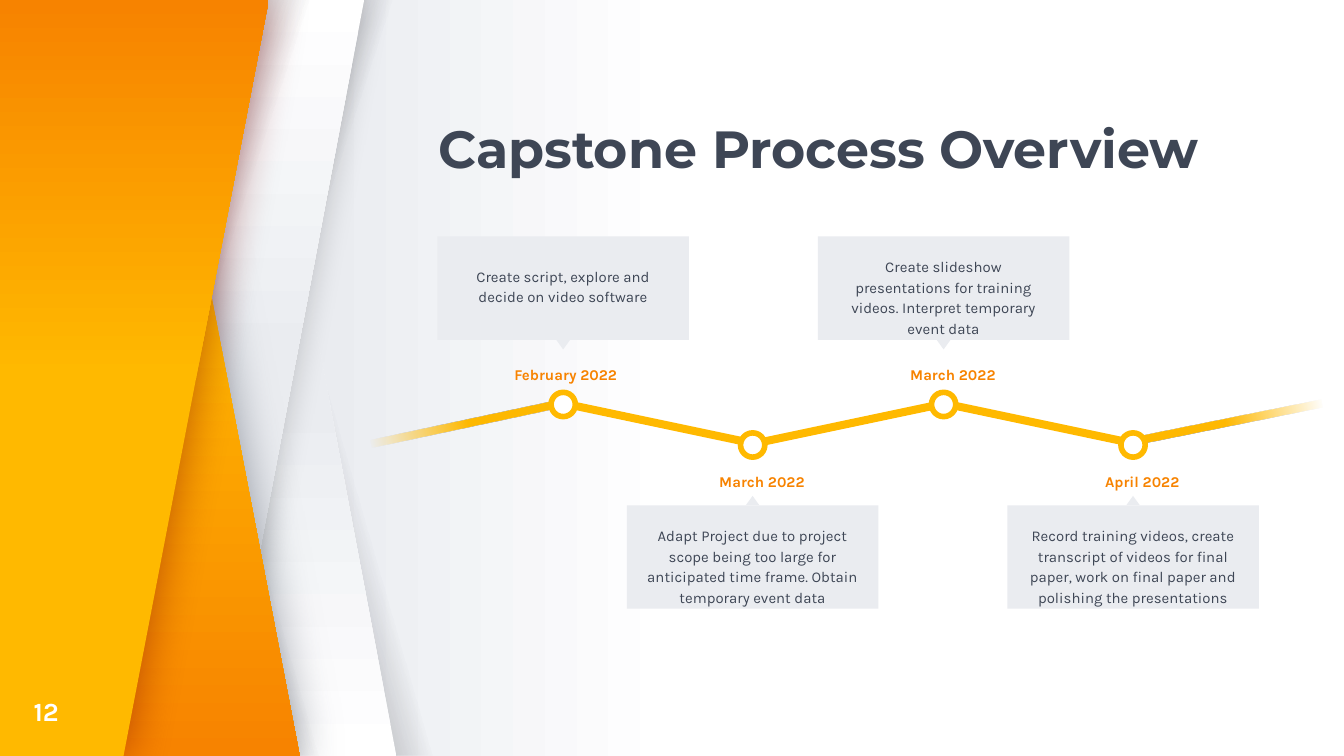
from lxml.etree import SubElement
from pptx import Presentation
from pptx.dml.color import RGBColor
from pptx.enum.shapes import MSO_SHAPE
from pptx.enum.text import MSO_ANCHOR, MSO_AUTO_SIZE, PP_ALIGN
from pptx.oxml.ns import qn
from pptx.util import Pt

COLORS = {
    "white": "FFFFFF", "mist": "EAECF0", "slate": "3E4655", "ink": "27252C",
    "yellow": "FFB900", "orange": "F78300", "black": "000000", "maroon": "7E0808",
}
WIDTH, HEIGHT = 720, 405

BACKGROUND = [(0, "white"), (50, "white"), (76, "mist"), (100, "mist")]
SHADE = [(0, "slate"), (13, "slate"), (55, "ink", 0), (100, "ink", 0)]
PALE = [(0, "white"), (47, "mist"), (100, "mist")]
BACK_ORANGE = [(0, "yellow"), (37, "yellow"), (100, "orange")]
FRONT_ORANGE = [(0, "yellow"), (50, "yellow"), (100, "orange")]
FADE = [(0, "yellow", 0), (50, "yellow"), (100, "yellow")]

BANDS = [
    {"left": 77, "flip": True, "slant": 0.753, "stops": SHADE, "angle": 196},
    {"left": 46.8, "flip": True, "slant": 0.463, "stops": PALE, "angle": 270},
    {"left": 46.8, "slant": 0.753, "stops": SHADE, "angle": 18},
    {"left": 29.5, "slant": 0.463, "stops": PALE, "angle": 90, "shadow": ("black", 20, 16.9)},
    {"left": 15.8, "flip": True, "slant": 0.753, "stops": SHADE, "angle": 196},
    {"points": [(0, 0), (0, HEIGHT), (160.6, HEIGHT), (82.8, 0)],
     "stops": BACK_ORANGE, "angle": 90, "shadow": ("slate", 50, 24.8)},
    {"left": 2.2, "slant": 0.753, "stops": SHADE, "angle": 18},
    {"points": [(0, HEIGHT), (0, 0), (144, 0), (66.2, HEIGHT)],
     "stops": FRONT_ORANGE, "angle": 270, "shadow": ("maroon", 50, 24.8)},
]
SEGMENTS = [
    (198, 348.1, True), (298.8, 11.9, False), (402.5, 348.1, False),
    (502.6, 11.9, False), (602.6, 168.9, True),
]
MILESTONES = [
    {"date": "February 2022", "text": "Create script, explore and decide on video software",
     "center": 301.7, "date_shift": 1.4, "text_shift": 5},
    {"date": "March 2022", "text": "Adapt Project due to project scope being too large for "
     "anticipated time frame. Obtain temporary event data", "center": 403.2},
    {"date": "March 2022", "text": "Create slideshow presentations for training videos. "
     "Interpret temporary event data", "center": 505.5},
    {"date": "April 2022", "text": "Record training videos, create transcript of videos for final "
     "paper, work on final paper and polishing the presentations", "center": 607},
]
UPPER = {"card": 126.7, "pointer": 182.2, "date": 187.2, "node": 216.7, "turn": 180}
LOWER = {"card": 270.7, "pointer": 265.7, "date": 244.8, "node": 238.4, "turn": 0}
CARD_WIDTH, CARD_HEIGHT = 134.8, 55.4


def rgb(name):
    """Return the named colour."""
    return RGBColor.from_string(COLORS[name])


def add_color(parent, name, alpha=100):
    """Add a colour element with its opacity in percent."""
    color = SubElement(parent, qn("a:srgbClr"), val=COLORS[name])
    if alpha < 100:
        SubElement(color, qn("a:alpha"), val=str(alpha * 1000))


def set_gradient(fill, properties, stops, angle):
    """Fill with a linear gradient of any number of stops."""
    fill.gradient()
    gradient = properties.find(qn("a:gradFill"))
    for child in list(gradient):
        gradient.remove(child)
    gradient.set("rotWithShape", "1")
    stop_list = SubElement(gradient, qn("a:gsLst"))
    for position, *color in stops:
        add_color(SubElement(stop_list, qn("a:gs"), pos=str(position * 1000)), *color)
    SubElement(gradient, qn("a:lin"), ang=str(angle * 60000), scaled="0")


def finish(shape, color=None, stops=None, angle=0, shadow=None):
    """Give a shape its fill and shadow, without an outline."""
    shape.shadow.inherit = False
    shape.line.fill.background()
    properties = shape._element.spPr
    if stops:
        set_gradient(shape.fill, properties, stops, angle)
    else:
        shape.fill.solid()
        shape.fill.fore_color.rgb = rgb(color)
    if shadow:
        name, alpha, blur = shadow
        outer = SubElement(properties.find(qn("a:effectLst")), qn("a:outerShdw"),
                           blurRad=str(Pt(blur)), dist="0", dir="0", algn="bl", rotWithShape="0")
        add_color(outer, name, alpha)
    return shape


def add_preset(slide, kind, left, top, width, height, adjustment=None, rotation=0, **style):
    """Add a preset shape placed in points."""
    shape = slide.shapes.add_shape(kind, Pt(left), Pt(top), Pt(width), Pt(height))
    if adjustment is not None:
        shape.adjustments[0] = adjustment
    shape.rotation = rotation
    return finish(shape, **style)


def write(shape, text, size, color, bold=False, font="Karla", inset=0,
          anchor=MSO_ANCHOR.TOP, **paragraph_format):
    """Write one formatted paragraph into a shape."""
    frame = shape.text_frame
    frame_format = {"word_wrap": True, "auto_size": MSO_AUTO_SIZE.NONE, "vertical_anchor": anchor}
    frame_format.update({f"margin_{side}": Pt(inset) for side in ("left", "right", "top", "bottom")})
    paragraph = frame.paragraphs[0]
    run = paragraph.add_run()
    run.text = text
    run.font.color.rgb = rgb(color)
    run_format = {"name": font, "size": Pt(size), "bold": bold}
    for target, values in ((frame, frame_format), (paragraph, paragraph_format), (run.font, run_format)):
        for name, value in values.items():
            setattr(target, name, value)


def add_text(slide, left, top, width, height, *args, **kwargs):
    """Add a text box placed in points."""
    write(slide.shapes.add_textbox(Pt(left), Pt(top), Pt(width), Pt(height)), *args, **kwargs)


def add_band(slide, band):
    """Add one slanted band of the left-hand decoration."""
    style = {name: band.get(name) for name in ("stops", "angle", "shadow")}
    if "points" in band:
        start, *rest = [(Pt(x), Pt(y)) for x, y in band["points"]]
        builder = slide.shapes.build_freeform(*start)
        builder.add_line_segments(rest, close=True)
        finish(builder.convert_to_shape(), **style)
        return
    shape = add_preset(slide, MSO_SHAPE.PARALLELOGRAM, band["left"], 0, 165.6, HEIGHT,
                       band["slant"], **style)
    if band.get("flip"):
        shape._element.spPr.find(qn("a:xfrm")).set("flipH", "1")


def add_milestone(slide, milestone, row):
    """Add a card, its pointer, its date and its node on the line."""
    center = milestone["center"]
    left = center - CARD_WIDTH / 2
    body = {"inset": 7.2, "alignment": PP_ALIGN.CENTER, "line_spacing": 1.15, "space_after": Pt(16)}
    add_preset(slide, MSO_SHAPE.ROUNDED_RECTANGLE, left, row["card"], CARD_WIDTH, CARD_HEIGHT,
               0, color="mist")
    add_preset(slide, MSO_SHAPE.ISOSCELES_TRIANGLE, center - 3.6, row["pointer"], 7.2, 5,
               rotation=row["turn"], color="mist")
    add_text(slide, center - 64, row["card"] + 2.9 + milestone.get("text_shift", 0), 128, 49,
             milestone["text"], 8, "slate", **body)
    add_text(slide, center + milestone.get("date_shift", 5) - 38, row["date"], 76, 17,
             milestone["date"], 8, "orange", bold=True, **body)
    node = add_preset(slide, MSO_SHAPE.OVAL, center - 6.5, row["node"] - 6.5, 13, 13, color="white")
    node.line.color.rgb = rgb("yellow")
    node.line.width = Pt(3)


def main():
    """Build the timeline slide."""
    presentation = Presentation()
    presentation.slide_width, presentation.slide_height = Pt(WIDTH), Pt(HEIGHT)
    slide = presentation.slides.add_slide(presentation.slide_layouts[5])
    background = slide.background.fill
    background.gradient()
    set_gradient(background, slide._element.find(".//" + qn("p:bgPr")), BACKGROUND, 180)
    for band in BANDS:
        add_band(slide, band)
    for left, rotation, fades in SEGMENTS:
        style = {"stops": FADE} if fades else {"color": "yellow"}
        add_preset(slide, MSO_SHAPE.ROUNDED_RECTANGLE, left, 224.6, 106.6, 4.3,
                   0 if fades else 0.5, rotation, **style)
    for index, milestone in enumerate(MILESTONES):
        add_milestone(slide, milestone, LOWER if index % 2 else UPPER)
    title = slide.shapes.title
    title.left, title.top, title.width, title.height = Pt(234.7), Pt(65.5), Pt(430.6), Pt(31)
    write(title, "Capstone Process Overview", 28, "slate", bold=True, font="Montserrat",
          anchor=MSO_ANCHOR.BOTTOM, alignment=PP_ALIGN.LEFT, line_spacing=0.9)
    add_text(slide, 18, 371.5, 28.8, 19.4, "12", 14, "white", bold=True, anchor=MSO_ANCHOR.MIDDLE)
    presentation.save("out.pptx")


if __name__ == "__main__":
    main()
